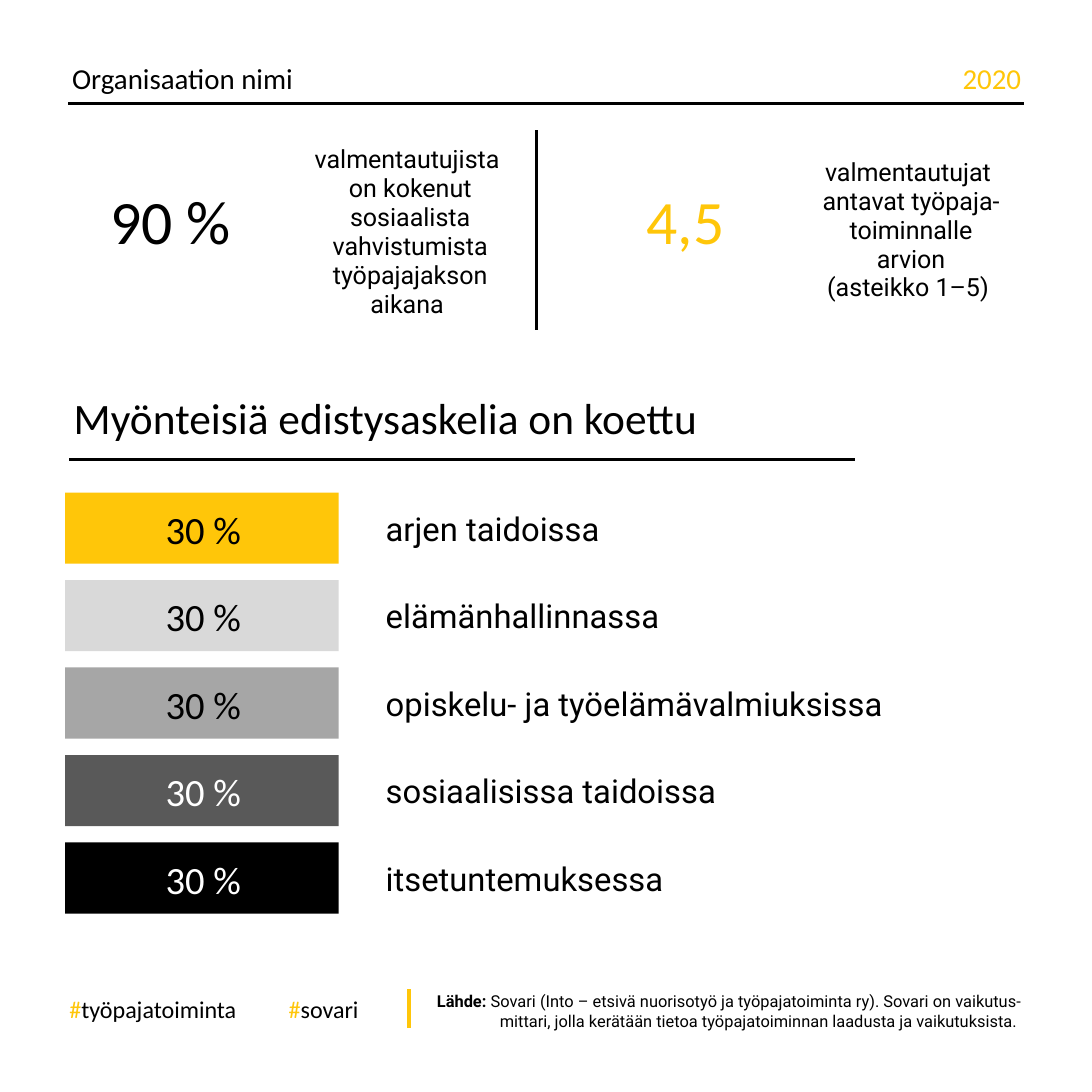
from dataclasses import dataclass
from typing import Any

from lxml import etree
from pptx import Presentation
from pptx.dml.color import RGBColor
from pptx.enum import shapes, text
from pptx.oxml import ns
from pptx.util import Pt

BLACK = RGBColor(0x00, 0x00, 0x00)
WHITE = RGBColor(0xFF, 0xFF, 0xFF)
YELLOW = RGBColor(0xFF, 0xC6, 0x09)
LIGHT_GREY = RGBColor(0xD9, 0xD9, 0xD9)
MID_GREY = RGBColor(0xA6, 0xA6, 0xA6)
DARK_GREY = RGBColor(0x59, 0x59, 0x59)

LEFT, CENTER, RIGHT = text.PP_ALIGN.LEFT, text.PP_ALIGN.CENTER, text.PP_ALIGN.RIGHT
TOP, MIDDLE = text.MSO_ANCHOR.TOP, text.MSO_ANCHOR.MIDDLE
SIDE = 566.64
Box = tuple[float, float, float, float]


@dataclass
class Run:
    text: str
    color: RGBColor = BLACK
    bold: bool = False


@dataclass
class Style:
    size: float
    font: str = "Calibri"
    align: Any = LEFT
    anchor: Any = TOP
    insets: Box = (0, 0, 0, 0)  # left, top, right, bottom
    spacing: Any = 1.0
    wrap: bool = True


@dataclass
class Block:
    box: Box
    style: Style
    lines: list[list[Run]]


@dataclass
class Rule:
    start: tuple[float, float]
    end: tuple[float, float]
    color: RGBColor = BLACK
    width: float = 1.5


@dataclass
class Bar:
    value: str
    label: str
    fill: RGBColor
    color: RGBColor = BLACK


TIGHT = Pt(24.8)
HEADING = Style(22.5, anchor=MIDDLE, insets=(0, 3.6, 8.64, 3.6))
ORGANISATION = Style(15, insets=(1.44, 0, 2.88, 8.64), spacing=TIGHT)
YEAR = Style(15, align=RIGHT, insets=(0, 0, 0, 8.64), spacing=TIGHT)
FIGURE = Style(32, align=CENTER, insets=(1.44, 10.08, 0, 22.32), spacing=TIGHT)
FACT = Style(13, "Roboto", CENTER, MIDDLE, (8.64, 3.6, 8.64, 3.6), Pt(15))
FACT_INDENTED = Style(13, "Roboto", CENTER, MIDDLE, (11.52, 3.6, 8.64, 3.6), Pt(15))
BAR_VALUE = Style(20, "Calibri", CENTER, MIDDLE, (1.44, 5.76, 0, 5.76), TIGHT)
BAR_LABEL = Style(17, "Roboto", LEFT, MIDDLE, (8.64, 3.6, 5.76, 3.6))
HASHTAG = Style(12.5, insets=(0, 3.6, 0, 3.6), spacing=1.07, wrap=False)
SOURCE = Style(8.5, "Roboto", RIGHT, MIDDLE)

TITLE_BOX = (38.2, 198.7, 494, 35.3)
TITLE = [[Run("Myönteisiä edistysaskelia on koettu")]]

BLOCKS = [
    # Header
    Block((36, 24.5, 307.4, 22.3), ORGANISATION, [[Run("Organisaation nimi")]]),
    Block((458.6, 24.5, 71.3, 22.3), YEAR, [[Run("2020", YELLOW)]]),
    # Key figures
    Block((33.8, 98.6, 108, 53.3), FIGURE, [[Run("90 %")]]),
    Block((149.8, 71.3, 126, 97.9), FACT, [
        [Run("valmentautujista ")],
        [Run("on kokenut sosiaalista vahvistumista työpajajakson aikana ")]]),
    Block((301, 98.6, 108, 53.3), FIGURE, [[Run("4,5", YELLOW)]]),
    Block((412.6, 77.8, 117.4, 82.8), FACT_INDENTED, [
        [Run("valmentautujat ")], [Run("antavat työpaja-")],
        [Run("toiminnalle arvion")], [Run("(asteikko 1–5) ")]]),
    # Footer
    Block((36, 511.2, 107.3, 22.3), HASHTAG, [[Run("#", YELLOW), Run("työpajatoiminta")]]),
    Block((149.8, 511.2, 48.2, 22.3), HASHTAG, [[Run("#", YELLOW), Run("sovari")]]),
    Block((223.9, 514.1, 306, 20.9), SOURCE, [
        [Run("Lähde: ", bold=True),
         Run("Sovari (Into – etsivä nuorisotyö ja työpajatoiminta ry). Sovari on vaikutus-")],
        [Run("mittari, jolla kerätään tietoa työpajatoiminnan laadusta ja vaikutuksista. ")]]),
]

RULES = [
    Rule((35.3, 53.5), (531.4, 53.5)),
    Rule((36, 238.5), (443.5, 238.5)),
    Rule((278.6, 67.7), (278.6, 171.4)),
    Rule((212.4, 533.5), (212.4, 513.4), YELLOW, 2),
]

BARS = [
    Bar("30 %", "arjen taidoissa", YELLOW),
    Bar("30 %", "elämänhallinnassa", LIGHT_GREY),
    Bar("30 %", "opiskelu- ja työelämävalmiuksissa", MID_GREY),
    Bar("30 %", "sosiaalisissa taidoissa", DARK_GREY, WHITE),
    Bar("30 %", "itsetuntemuksessa", BLACK, WHITE),
]
BAR_LEFT, BAR_TOP, BAR_WIDTH, BAR_HEIGHT, BAR_PITCH = 33.8, 255.6, 142, 36.9, 45.4
LABEL_LEFT, LABEL_WIDTH = 191.5, 283


def set_attributes(target: Any, values: dict[str, Any]) -> None:
    for name, value in values.items():
        setattr(target, name, value)


def place(sp: Any, box: Box) -> None:
    set_attributes(sp, dict(zip(("left", "top", "width", "height"), map(Pt, box))))


def write(sp: Any, style: Style, lines: list[list[Run]]) -> None:
    tf = sp.text_frame
    left, top, right, bottom = map(Pt, style.insets)
    set_attributes(tf, {
        "margin_left": left, "margin_top": top, "margin_right": right,
        "margin_bottom": bottom, "vertical_anchor": style.anchor,
        "word_wrap": style.wrap, "auto_size": text.MSO_AUTO_SIZE.NONE})
    for i, line in enumerate(lines):
        p = tf.add_paragraph() if i else tf.paragraphs[0]
        set_attributes(p, {"alignment": style.align, "line_spacing": style.spacing})
        for run in line:
            r = p.add_run()
            r.text = run.text
            set_attributes(r.font, {
                "name": style.font, "size": Pt(style.size), "bold": run.bold})
            r.font.color.rgb = run.color


def add_block(s: Any, block: Block) -> None:
    sp = s.shapes.add_textbox(*map(Pt, block.box))
    write(sp, block.style, block.lines)


def add_rule(s: Any, rule: Rule) -> None:
    line = s.shapes.add_connector(
        shapes.MSO_CONNECTOR.STRAIGHT, *map(Pt, rule.start + rule.end))
    line.line.color.rgb = rule.color
    line.line.width = Pt(rule.width)
    etree.SubElement(line._element.spPr, ns.qn("a:effectLst"))


def add_bar(s: Any, bar: Bar, top: float) -> None:
    sp = s.shapes.add_shape(
        shapes.MSO_SHAPE.RECTANGLE, *map(Pt, (BAR_LEFT, top, BAR_WIDTH, BAR_HEIGHT)))
    sp.shadow.inherit = False
    sp.fill.solid()
    sp.fill.fore_color.rgb = bar.fill
    sp.line.fill.background()
    write(sp, BAR_VALUE, [[Run(bar.value, bar.color)]])
    add_block(s, Block((LABEL_LEFT, top, LABEL_WIDTH, BAR_HEIGHT), BAR_LABEL,
                       [[Run(bar.label)]]))


def main() -> None:
    prs = Presentation()
    prs.slide_width = prs.slide_height = Pt(SIDE)
    s = prs.slides.add_slide(prs.slide_layouts[5])

    # Heading
    place(s.shapes.title, TITLE_BOX)
    write(s.shapes.title, HEADING, TITLE)

    # Lines, texts and progress bars
    for rule in RULES:
        add_rule(s, rule)
    for block in BLOCKS:
        add_block(s, block)
    for i, bar in enumerate(BARS):
        add_bar(s, bar, BAR_TOP + i * BAR_PITCH)

    prs.save("out.pptx")


if __name__ == "__main__":
    main()
